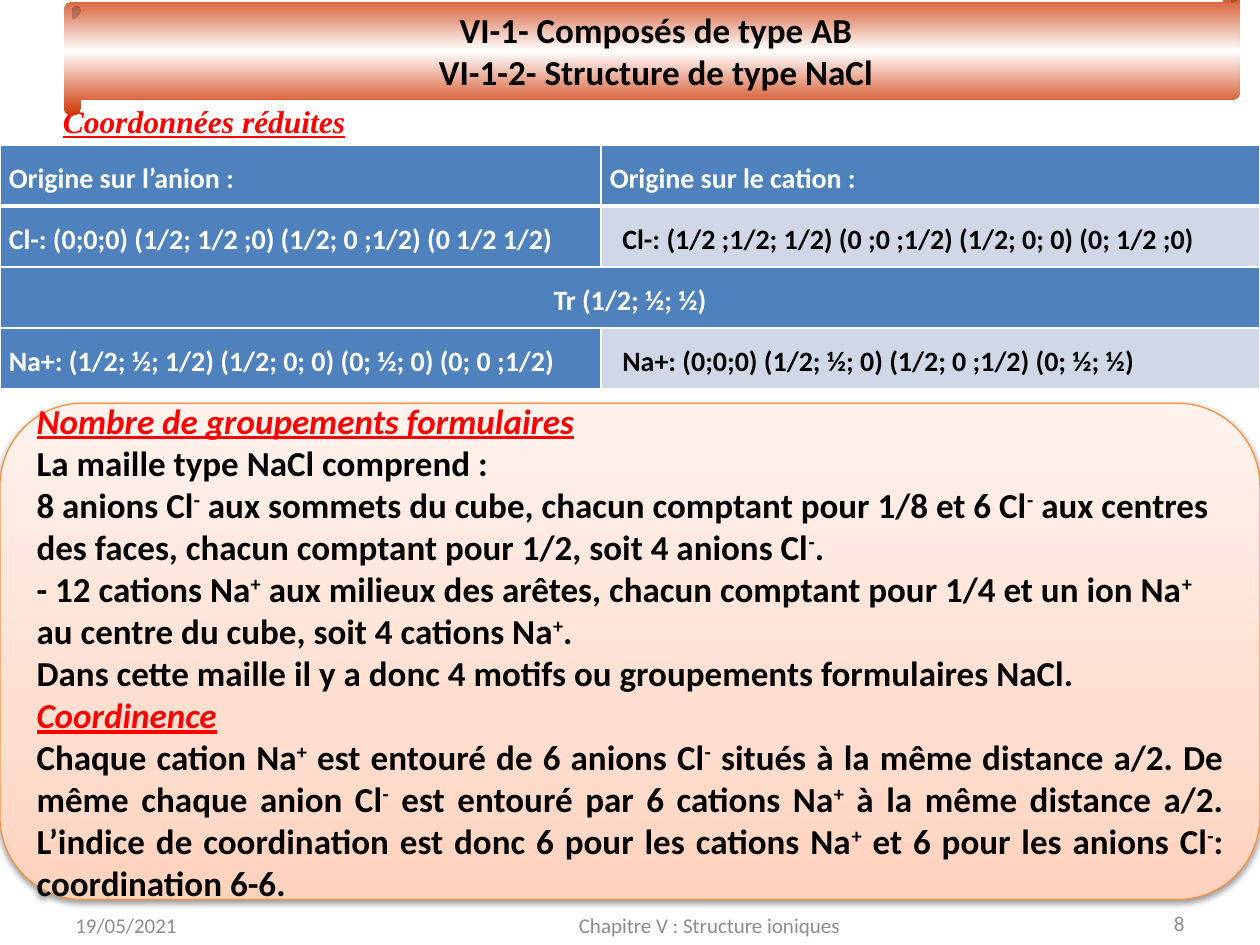
from lxml import etree
from pptx import Presentation
from pptx.dml.color import RGBColor
from pptx.enum.shapes import MSO_SHAPE as Shape
from pptx.enum.text import MSO_ANCHOR as Anchor, MSO_AUTO_SIZE as AutoSize, PP_ALIGN as Align
from pptx.oxml import parse_xml
from pptx.oxml.ns import nsdecls, qn
from pptx.util import Inches, Pt

COLORS = {
    "black": "000000", "white": "FFFFFF", "red": "FF0000", "grey": "8C8C8C",
    "blue": "4F81BD", "pale": "D0D8E8", "orange": "F69240", "brick": "CC3300",
    "peach": "FFD2BD", "light_peach": "FFDED0", "cream": "FFF2ED",
}
BODY = {"name": "Calibri", "size": Pt(20), "bold": True, "color": "black"}
HEADING = BODY | {"color": "red", "italic": True, "underline": True}
SUBTITLE = HEADING | {"name": "Times New Roman", "size": Pt(18)}
FOOTER = {"name": "Calibri", "size": Pt(12), "color": "grey"}
CELL = BODY | {"size": Pt(16)}
HEADER_CELL = CELL | {"color": "white"}

TITLE = ["VI-1- Composés de type AB", "VI-1-2- Structure de type NaCl"]
COORDINATES = [
    ["Origine sur l’anion\u00a0:", "Origine sur le cation :"],
    ["Cl-: (0;0;0) (1/2; 1/2 ;0) (1/2; 0 ;1/2) (0 1/2 1/2)",
     "Cl-: (1/2 ;1/2; 1/2) (0 ;0 ;1/2) (1/2; 0; 0) (0; 1/2 ;0)"],
    ["Tr (1/2; ½; ½)"],
    ["Na+: (1/2; ½; 1/2) (1/2; 0; 0) (0; ½; 0) (0; 0 ;1/2)",
     "Na+: (0;0;0) (1/2; ½; 0) (1/2; 0 ;1/2) (0; ½; ½)"],
]
EXPLANATION = [
    ("Nombre de groupements formulaires", HEADING, Align.LEFT),
    ("La maille type NaCl comprend :", BODY, Align.LEFT),
    ("8 anions Cl^- aux sommets du cube, chacun comptant pour 1/8 et 6 Cl^- aux centres "
     "des faces, chacun comptant pour 1/2, soit 4 anions Cl^-.", BODY, Align.LEFT),
    ("- 12 cations Na^+ aux milieux des arêtes, chacun comptant pour 1/4 et un ion Na^+ "
     "au centre du cube, soit 4 cations Na^+.", BODY, Align.LEFT),
    ("Dans cette maille il y a donc 4 motifs ou groupements formulaires NaCl.", BODY, Align.LEFT),
    ("Coordinence", HEADING, Align.LEFT),
    ("Chaque cation Na^+ est entouré de 6 anions Cl^- situés à la même distance a/2. "
     "De même chaque anion Cl^- est entouré par 6 cations Na^+ à la même distance a/2. "
     "L’indice de coordination est donc 6 pour les cations Na^+ et 6 pour les anions Cl^-: "
     "coordination 6-6.", BODY, Align.JUSTIFY),
]


def rgb(name):
    return RGBColor.from_string(COLORS[name])


class SlideBuilder:
    def __init__(self, slide):
        self.slide = slide

    def fill_frame(self, frame, paragraphs, line_spacing=None):
        """Fill a frame with (text, style, alignment); ^ raises the next character."""
        for index, (text, style, align) in enumerate(paragraphs):
            para = frame.add_paragraph() if index else frame.paragraphs[0]
            para.alignment = align
            para.line_spacing = line_spacing
            first, *rest = text.split("^")
            self.add_span(para, first, style)
            for piece in rest:
                raised = self.add_span(para, piece[0], style)
                raised._r.get_or_add_rPr().set("baseline", "30000")
                self.add_span(para, piece[1:], style)

    def add_span(self, para, text, style):
        span = para.add_run()
        span.text = text
        for key, value in style.items():
            if key == "color":
                span.font.color.rgb = rgb(value)
            else:
                setattr(span.font, key, value)
        return span

    def text(self, place, text, style, align=Align.LEFT):
        box = self.slide.shapes.add_textbox(*map(Inches, place))
        box.text_frame.word_wrap = True
        box.text_frame.auto_size = AutoSize.NONE
        box.text_frame.vertical_anchor = Anchor.MIDDLE
        self.fill_frame(box.text_frame, [(text, style, align)])

    def panel(self, kind, place, stops, angle, paragraphs, anchor, line=None):
        """Add a shape filled with a gradient; the angle runs clockwise."""
        shape = self.slide.shapes.add_shape(kind, *map(Inches, place))
        shape.shadow.inherit = False
        if line:
            shape.line.color.rgb = rgb(line)
            shape.line.width = Pt(0.75)
        else:
            shape.line.fill.background()
        shape.fill.gradient()
        gradient = shape._element.spPr.find(qn("a:gradFill"))
        stop_list = gradient.find(qn("a:gsLst"))
        for stop in list(stop_list):
            stop_list.remove(stop)
        for position, color in stops:
            stop = etree.SubElement(stop_list, qn("a:gs"), pos=str(position * 1000))
            etree.SubElement(stop, qn("a:srgbClr"), val=COLORS[color])
        gradient.find(qn("a:lin")).set("ang", str(angle * 60000))
        shape.text_frame.word_wrap = True
        shape.text_frame.vertical_anchor = anchor
        self.fill_frame(shape.text_frame, paragraphs)
        return shape

    def drop_shadow(self, shape):
        effects = shape._element.spPr.find(qn("a:effectLst"))
        effects.append(parse_xml(
            f'<a:outerShdw {nsdecls("a")} blurRad="{Pt(3.1)}" dist="{Pt(1.6)}" dir="5400000" '
            f'rotWithShape="0"><a:srgbClr val="{COLORS["black"]}"><a:alpha val="38000"/>'
            '</a:srgbClr></a:outerShdw>'))

    def cell_borders(self, cell, row):
        widths = {"L": 1, "R": 1, "T": 3 if row == 1 else 1, "B": 3 if row == 0 else 1}
        for index, (side, width) in enumerate(widths.items()):
            cell._tc.get_or_add_tcPr().insert(index, parse_xml(
                f'<a:ln{side} {nsdecls("a")} w="{Pt(width)}"><a:solidFill>'
                f'<a:srgbClr val="{COLORS["white"]}"/></a:solidFill></a:ln{side}>'))

    def table(self, place, widths, rows):
        """Add the table; a row holding one text spans every column."""
        table = self.slide.shapes.add_table(len(rows), len(widths), *map(Inches, place)).table
        table.horz_banding = False
        for column, width in zip(table.columns, widths):
            column.width = Inches(width)
        for row, texts in enumerate(rows):
            spanning = len(texts) == 1
            if spanning:
                table.cell(row, 0).merge(table.cell(row, len(widths) - 1))
            for col in range(len(widths)):
                cell = table.cell(row, col)
                plain = row > 0 and col > 0 and not spanning
                cell.fill.solid()
                cell.fill.fore_color.rgb = rgb("pale" if plain else "blue")
                self.cell_borders(cell, row)
                margins = {"left": 0.17 if plain else 0.07, "right": 0.07, "top": 0, "bottom": 0}
                for side, margin in margins.items():
                    setattr(cell, f"margin_{side}", Inches(margin))
                if col < len(texts):
                    align = Align.CENTER if spanning else Align.JUSTIFY
                    style = CELL if plain else HEADER_CELL
                    self.fill_frame(cell.text_frame, [(texts[col], style, align)], 1.5)


def main():
    deck = Presentation()
    deck.slide_width, deck.slide_height = Inches(10), Inches(7.5)
    page = SlideBuilder(deck.slides.add_slide(deck.slide_layouts[6]))

    explanation = page.panel(
        Shape.ROUNDED_RECTANGLE, (0, 3.2, 10, 3.94),
        [(0, "peach"), (35, "light_peach"), (100, "cream")], 270,
        EXPLANATION, Anchor.MIDDLE, line="orange")
    page.drop_shadow(explanation)

    page.text((3.42, 7.14, 4.42, 0.4), "Chapitre V : Structure ioniques", FOOTER, Align.CENTER)
    page.text((0.5, 7.14, 2.33, 0.4), "19/05/2021", FOOTER)
    page.text((7.17, 7.13, 2.33, 0.4), "8", FOOTER, Align.RIGHT)

    page.table((0, 1.15, 10, 1.94), (4.77, 5.23), COORDINATES)
    page.text((0.4, 0.76, 3.18, 0.4), "Coordonnées réduites", SUBTITLE)
    page.panel(
        Shape.HORIZONTAL_SCROLL, (0.51, -0.11, 9.33, 1.03),
        [(0, "brick"), (50, "white"), (100, "brick")], 90,
        [(line, BODY, Align.CENTER) for line in TITLE], Anchor.TOP)
    deck.save("out.pptx")


if __name__ == "__main__":
    main()
